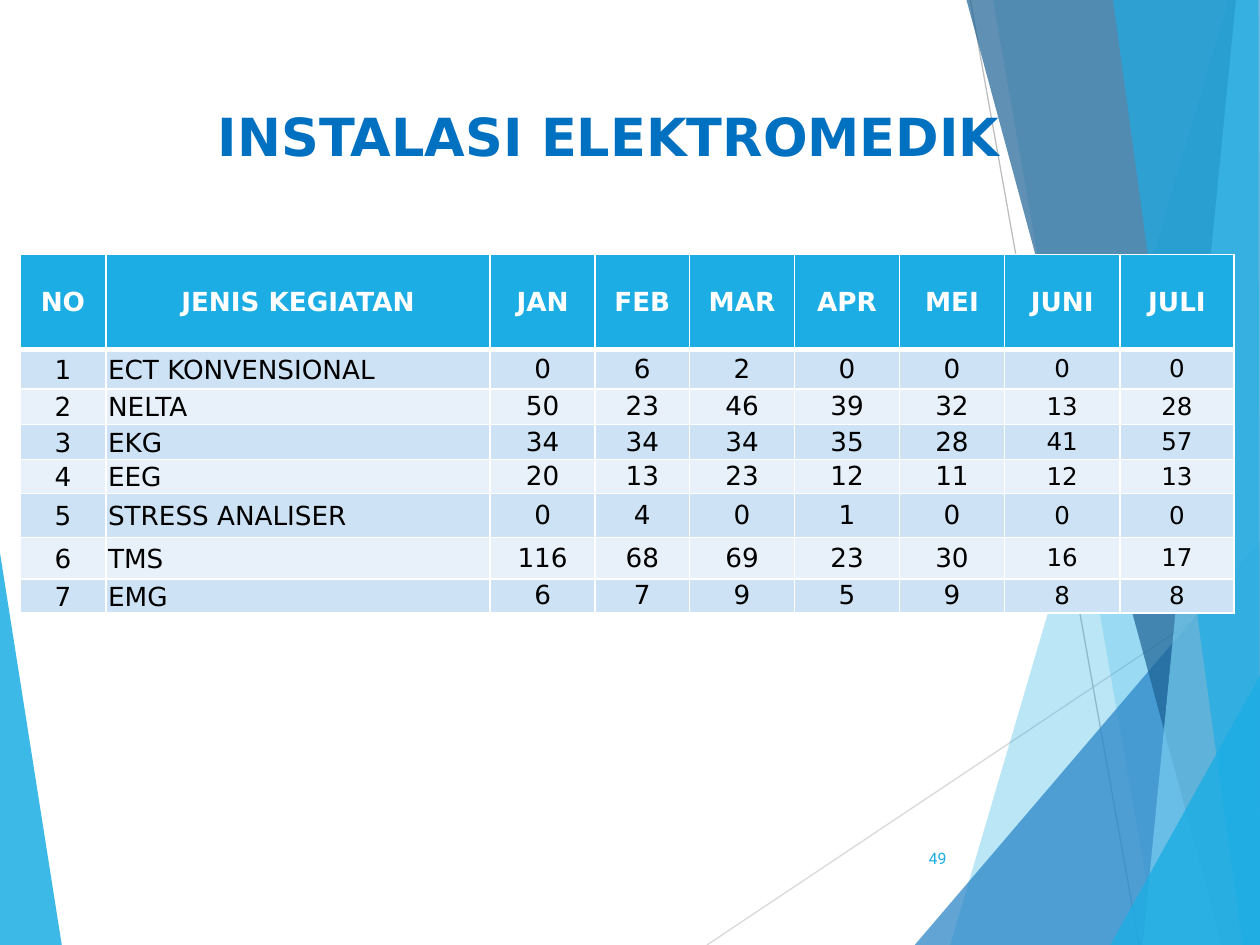
import pptx
import pptx.util
import pptx.dml.color
import pptx.enum.shapes
import pptx.enum.text
import pptx.oxml
import pptx.oxml.ns
from lxml import etree

Pt = pptx.util.Pt
RGB = pptx.dml.color.RGBColor
ALIGN = pptx.enum.text.PP_ALIGN
ANCHOR = pptx.enum.text.MSO_ANCHOR
qn = pptx.oxml.ns.qn

SKY = RGB(0x1C, 0xAD, 0xE4)
BLUE = RGB(0x26, 0x83, 0xC6)
NAVY = RGB(0x1D, 0x62, 0x94)
PALE = RGB(0x77, 0xCE, 0xEF)
TITLE = RGB(0x00, 0x70, 0xC0)
BAND = RGB(0xCD, 0xE3, 0xF5)
LIGHT = RGB(0xE8, 0xF1, 0xFA)
WHITE = RGB(0xFF, 0xFF, 0xFF)
BLACK = RGB(0x00, 0x00, 0x00)
GREY = RGB(0xBF, 0xBF, 0xBF)
SILVER = RGB(0xD9, 0xD9, 0xD9)

PANELS = [
    (SKY, 85, [(0, 316), (35.3, 540), (0, 540)]),
    (SKY, 30, [(702, 0), (543, 540), (720, 540), (720, 0)]),
    (SKY, 20, [(567.5, 0), (661.5, 540), (720, 540), (720, 0)]),
    (BLUE, 72, [(522.7, 540), (720, 309), (720, 540)]),
    (NAVY, 70, [(552.3, 0), (698.4, 540), (720, 540), (720, 0)]),
    (PALE, 70, [(706.3, 0), (653, 540), (720, 540), (720, 0)]),
    (SKY, 65, [(636, 0), (710, 540), (720, 540), (719, 0)]),
    (SKY, 80, [(634.5, 540), (720, 386), (720, 540)]),
]
LINES = [(SILVER, 404, 540, 720, 329), (GREY, 554.5, 0, 651, 540)]

HEAD = ["NO", "JENIS KEGIATAN", "JAN", "FEB", "MAR", "APR", "MEI", "JUNI", "JULI"]
DATA = [
    ("ECT KONVENSIONAL", 0, 6, 2, 0, 0, 0, 0),
    ("NELTA", 50, 23, 46, 39, 32, 13, 28),
    ("EKG", 34, 34, 34, 35, 28, 41, 57),
    ("EEG", 20, 13, 23, 12, 11, 12, 13),
    ("STRESS ANALISER", 0, 4, 0, 1, 0, 0, 0),
    ("TMS", 116, 68, 69, 23, 30, 16, 17),
    ("EMG", 6, 7, 9, 5, 9, 8, 8),
]
WIDTHS = [49.2, 219.5, 60, 54, 60, 60, 60, 66, 65.2]
HEIGHTS = [54.5, 22.5, 20.2, 20.2, 19.4, 25.2, 23.6, 19.4]


def write(frame, text, size=15, color=BLACK, bold=False, font="DejaVu Sans",
          align=ALIGN.CENTER, anchor=ANCHOR.MIDDLE):
    frame.word_wrap = True
    frame.vertical_anchor = anchor
    para = frame.paragraphs[0]
    para.alignment = align
    run = para.add_run()
    run.text = text
    run.font.size = Pt(size)
    run.font.color.rgb = color
    run.font.bold = bold
    run.font.name = font


class Deck:
    def __init__(self):
        self.file = pptx.Presentation()
        self.file.slide_width = Pt(720)
        self.file.slide_height = Pt(540)
        self.slide = self.file.slides.add_slide(self.file.slide_layouts[5])
        self.shapes = self.slide.shapes

    def panel(self, color, alpha, points):
        spots = [(Pt(x), Pt(y)) for x, y in points]
        pen = self.shapes.build_freeform(*spots[0])
        pen.add_line_segments(spots[1:], close=True)
        shape = pen.convert_to_shape()
        shape.shadow.inherit = False
        shape.line.fill.background()
        shape.fill.solid()
        shape.fill.fore_color.rgb = color
        tint = shape.element.spPr.find(qn("a:solidFill"))[0]
        etree.SubElement(tint, qn("a:alpha"), val=str(alpha * 1000))

    def line(self, color, *ends):
        kind = pptx.enum.shapes.MSO_CONNECTOR.STRAIGHT
        line = self.shapes.add_connector(kind, *map(Pt, ends))
        line.line.color.rgb = color
        line.line.width = Pt(0.75)
        etree.SubElement(line.element.spPr, qn("a:effectLst"))

    def title(self, text, *box):
        title = self.shapes.title
        title.left, title.top, title.width, title.height = map(Pt, box)
        write(title.text_frame, text, size=30, color=TITLE, bold=True,
              anchor=ANCHOR.TOP)
        title.element.getparent().append(title.element)

    def label(self, text, *box, **style):
        write(self.shapes.add_textbox(*map(Pt, box)).text_frame, text, **style)

    def cell(self, cell, text, fill, pads, edges, **style):
        cell.fill.solid()
        cell.fill.fore_color.rgb = fill
        (cell.margin_left, cell.margin_top,
         cell.margin_right, cell.margin_bottom) = map(Pt, pads)
        write(cell.text_frame, text, **style)
        cell.vertical_anchor = ANCHOR.MIDDLE
        props = cell._tc.get_or_add_tcPr()
        for spot, (side, width) in enumerate(edges.items()):
            edge = etree.Element(qn("a:ln" + side), w=str(Pt(width)))
            paint = etree.SubElement(edge, qn("a:solidFill"))
            etree.SubElement(paint, qn("a:srgbClr"), val=str(WHITE))
            props.insert(spot, edge)

    def table(self, left, top):
        rows = [HEAD] + [(n, *row) for n, row in enumerate(DATA, 1)]
        box = map(Pt, (left, top, sum(WIDTHS), sum(HEIGHTS)))
        grid = self.shapes.add_table(len(rows), len(HEAD), *box).table
        for col, width in zip(grid.columns, WIDTHS):
            col.width = Pt(width)
        for row, height in zip(grid.rows, HEIGHTS):
            row.height = Pt(height)
        for r, row in enumerate(rows):
            edges = {"L": 1, "R": 1, "T": 3 if r == 1 else 1,
                     "B": 3 if r == 0 else 1}
            for c, value in enumerate(row):
                if r == 0:
                    fill, pads = SKY, (10.8, 5.4, 10.8, 5.4)
                    style = dict(color=WHITE, bold=True)
                else:
                    fill = BAND if r % 2 else LIGHT
                    pads = (1.2, 1.2, 1.2, 0) if c < 2 else (0, 0, 0, 0)
                    style = dict(size=14 if c > 6 else 15,
                                 align=ALIGN.LEFT if c == 1 else ALIGN.CENTER)
                self.cell(grid.cell(r, c), str(value), fill, pads, edges, **style)


def main():
    deck = Deck()
    deck.panel(*PANELS[0])
    for line in LINES:
        deck.line(*line)
    for panel in PANELS[1:]:
        deck.panel(*panel)
    deck.title("INSTALASI ELEKTROMEDIK", 98, 56, 500, 57)
    deck.table(11.4, 145.3)
    deck.label("49", 507.6, 476, 40.3, 28.8, size=9, color=SKY,
               font="Roboto", align=ALIGN.RIGHT)
    deck.file.save("out.pptx")


if __name__ == "__main__":
    main()
